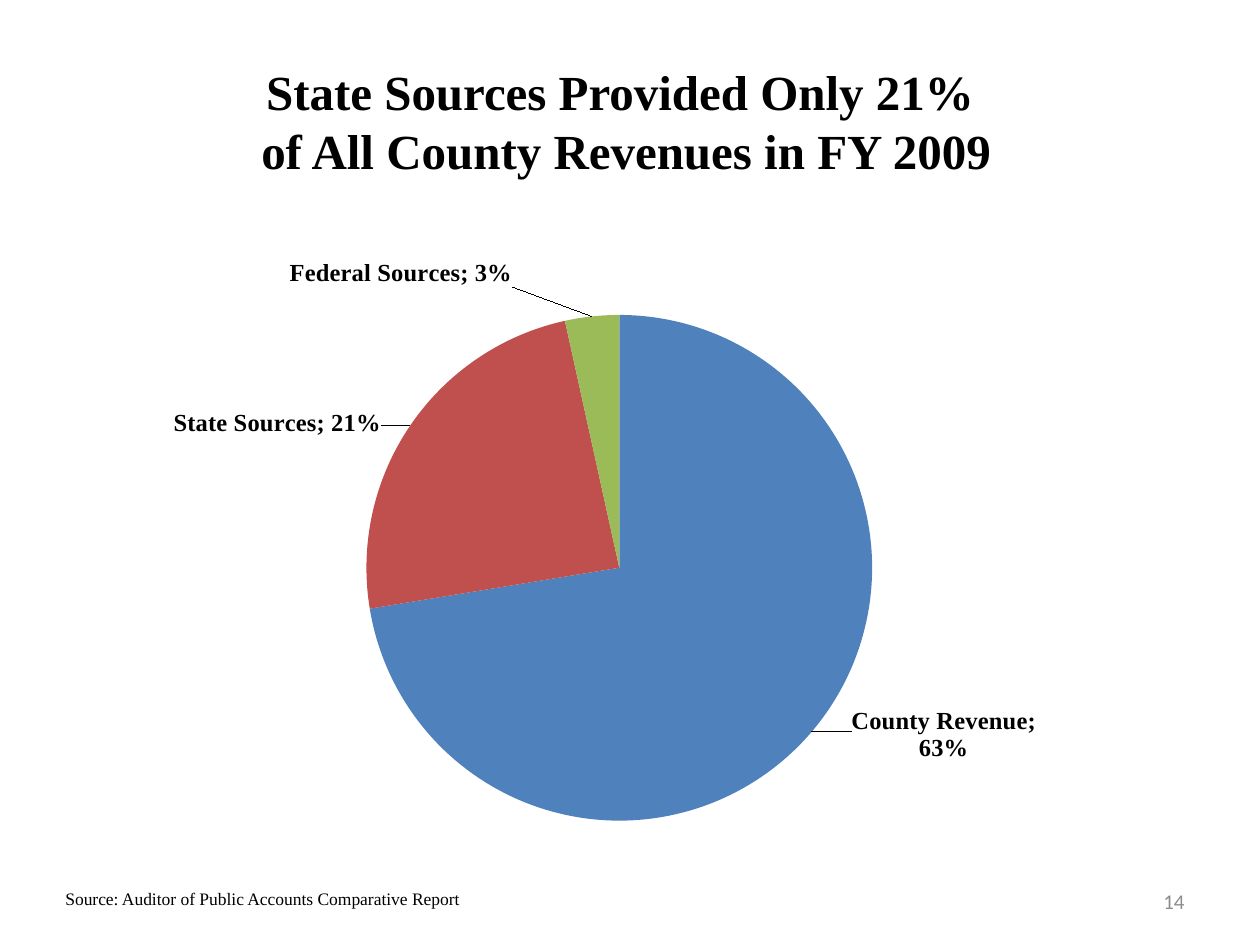
from pptx import Presentation
from pptx.chart.data import CategoryChartData as ChartData
from pptx.dml.color import RGBColor
from pptx.enum.chart import XL_CHART_TYPE as Kind, XL_LABEL_POSITION as Spot
from pptx.enum.text import MSO_ANCHOR as Anchor, PP_ALIGN as Align
from pptx.oxml import parse_xml
from pptx.oxml.ns import nsdecls, qn
from pptx.util import Inches, Pt

BLACK = RGBColor(0x00, 0x00, 0x00)
GRAY = RGBColor(0x8C, 0x8C, 0x8C)
BLUE = RGBColor(0x4F, 0x81, 0xBD)
RED = RGBColor(0xC0, 0x50, 0x4D)
GREEN = RGBColor(0x9B, 0xBB, 0x59)
SERIF = "Times New Roman"
SANS = "Calibri"

# Source, share, colour, label shift as a fraction of the chart
SHARES = [
    ("County Revenue", 0.63, BLUE, (0.03, -0.04)),
    ("State Sources", 0.21, RED, (-0.02, 0.02)),
    ("Federal Sources", 0.03, GREEN, (-0.07, -0.03)),
]


def layout(tags):
    """Return a manual chart layout holding the given tags and values."""
    body = "".join(f'<c:{tag} val="{val}"/>' for tag, val in tags.items())
    return parse_xml(f'<c:layout {nsdecls("c")}><c:manualLayout>{body}'
                     "</c:manualLayout></c:layout>")


class Deck:
    def __init__(self):
        self.prs = Presentation()
        self.prs.slide_width, self.prs.slide_height = Inches(10), Inches(7.5)
        self.slide = self.prs.slides.add_slide(self.prs.slide_layouts[5])

    def style(self, font, size, color=BLACK, bold=False, face=SERIF):
        font.name, font.size, font.bold = face, Pt(size), bold
        font.color.rgb = color

    def title(self, text, box):
        shape = self.slide.shapes.title
        shape.left, shape.top, shape.width, shape.height = map(Inches, box)
        frame = shape.text_frame
        frame.text = text
        frame.vertical_anchor = Anchor.MIDDLE
        para = frame.paragraphs[0]
        para.alignment = Align.CENTER
        for run in para.runs:
            self.style(run.font, 28, bold=True)

    def text(self, text, box, size, color=BLACK, face=SERIF,
             align=Align.LEFT, anchor=Anchor.TOP, wrap=True):
        frame = self.slide.shapes.add_textbox(*map(Inches, box)).text_frame
        frame.text = text
        frame.word_wrap = wrap
        frame.vertical_anchor = anchor
        para = frame.paragraphs[0]
        para.alignment = align
        self.style(para.runs[0].font, size, color, face=face)

    def pie(self, shares, box, plot):
        data = ChartData(number_format="0%")
        data.categories = [name for name, *_ in shares]
        data.add_series("Series 1", [share for _, share, *_ in shares])
        chart = self.slide.shapes.add_chart(
            Kind.PIE, *map(Inches, box), data).chart
        chart.has_legend = chart.has_title = False
        self.style(chart.font, 12)

        area = chart._chartSpace.chart.plotArea
        for old in area.findall(qn("c:layout")):
            area.remove(old)
        area.insert(0, layout({"layoutTarget": "inner", "xMode": "edge",
                               "yMode": "edge", **plot}))

        series = chart.plots[0].series[0]
        labels = series.data_labels
        labels.show_value = labels.show_category_name = True
        labels.number_format, labels.number_format_is_linked = "0%", False
        labels.position = Spot.OUTSIDE_END
        self.style(labels.font, 14, bold=True)
        for i, (_, _, color, shift) in enumerate(shares):
            point = series.points[i]
            point.format.fill.solid()
            point.format.fill.fore_color.rgb = color
            self.label(point.data_label, labels, i, shift)

    def label(self, label, labels, i, shift):
        """Show category and value, moved off the usual spot."""
        self.style(label.font, 14, bold=True)
        label.position = Spot.OUTSIDE_END
        node = labels._element.findall(qn("c:dLbl"))[i]
        node.find(qn("c:showCatName")).set("val", "1")
        node.insert(1, layout(dict(zip("xy", shift))))
        node.insert(2, parse_xml(f'<c:numFmt {nsdecls("c")} formatCode="0%" '
                                 'sourceLinked="0"/>'))


def main():
    deck = Deck()
    deck.title("State Sources Provided Only 21%\v of All County Revenues in FY 2009",
               (0.42, 0.33, 9, 1.25))
    deck.pie(SHARES, (0.5, 1.33, 8.92, 5.83),
             {"x": 0.27, "y": 0.17, "w": 0.45, "h": 0.75})
    deck.text("14", (7.17, 6.95, 2.33, 0.4), 12, GRAY, SANS,
              Align.RIGHT, Anchor.MIDDLE)
    deck.text("Source: Auditor of Public Accounts Comparative Report",
              (0.42, 7, 3.39, 0.27), 10, wrap=False)
    deck.prs.save("out.pptx")


if __name__ == "__main__":
    main()
